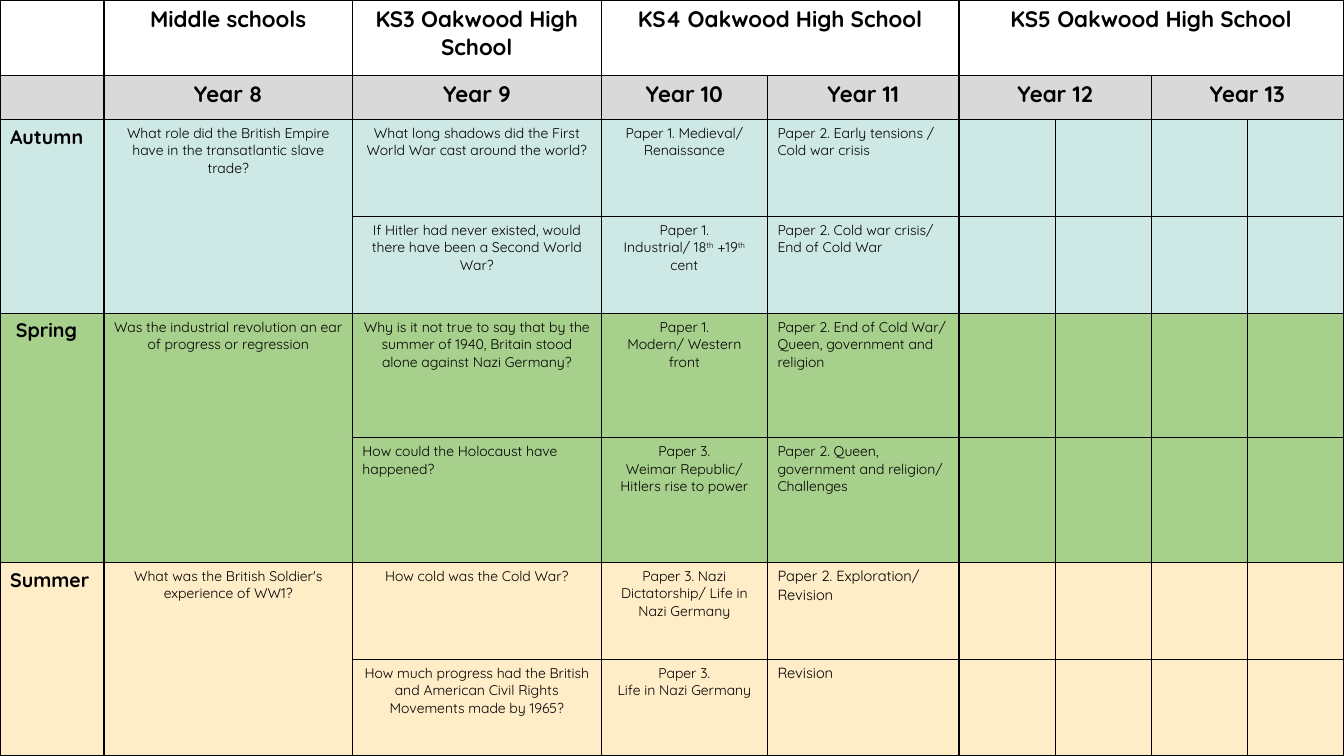
import pptx
import pptx.dml.color
import pptx.enum.text
import pptx.oxml
import pptx.oxml.ns
import pptx.util
from pptx.util import Cm, Pt

RGBColor = pptx.dml.color.RGBColor
PP_ALIGN = pptx.enum.text.PP_ALIGN

BLACK = RGBColor(0x00, 0x00, 0x00)
WHITE = RGBColor(0xFF, 0xFF, 0xFF)
GREY = RGBColor(0xD9, 0xD9, 0xD9)
AUTUMN = RGBColor(0xCE, 0xE9, 0xE5)
SPRING = RGBColor(0xA8, 0xD0, 0x8D)
SUMMER = RGBColor(0xFF, 0xED, 0xC8)

FONT = "Quicksand"
COL_WIDTHS = [2.62, 6.26, 6.27, 4.19, 4.83] + [2.42] * 4
ROW_HEIGHTS = [1.9, 1.11, 2.44, 2.44, 3.14, 3.14, 2.44, 2.44]
ROW_FILLS = [WHITE, GREY] + [AUTUMN] * 2 + [SPRING] * 2 + [SUMMER] * 2

# Cell text by row; ^ marks the start and end of a superscript
ROWS = [
    ["", "Middle schools", "KS3 Oakwood High School",
     "KS4 Oakwood High School", "", "KS5 Oakwood High School"],
    ["", "Year 8", "Year 9", "Year 10", "Year 11", "Year 12", "", "Year 13"],
    ["Autumn",
     "What role did the British Empire have in the transatlantic slave trade?",
     "What long shadows did the First World War cast around the world?",
     "Paper 1. Medieval/ Renaissance",
     "Paper 2. Early tensions / Cold war crisis"],
    ["", "",
     "If Hitler had never existed, would there have been a Second World War?",
     "Paper 1.\nIndustrial/ 18^th^ +19^th^ cent",
     "Paper 2. Cold war crisis/ End of Cold War"],
    ["Spring",
     "Was the industrial revolution an ear of progress or regression",
     "Why is it not true to say that by the summer of 1940, Britain stood "
     "alone against Nazi Germany?",
     "Paper 1.\nModern/ Western front",
     "Paper 2. End of Cold War/ Queen, government and religion"],
    ["", "",
     "How could the Holocaust have happened?",
     "Paper 3.\nWeimar Republic/\nHitlers rise to power",
     "Paper 2. Queen, government and religion/ Challenges"],
    ["Summer",
     "What was the British Soldier's experience of WW1?",
     "How cold was the Cold War?",
     "Paper 3. Nazi Dictatorship/ Life in Nazi Germany",
     "Paper 2. Exploration/ Revision"],
    ["", "",
     "How much progress had the British and American Civil Rights Movements "
     "made by 1965?",
     "Paper 3.\nLife in Nazi Germany",
     "Revision"],
]
HOLOCAUST = (5, 2)
MERGES = [((0, 3), (0, 4)), ((0, 5), (0, 8)), ((1, 5), (1, 6)), ((1, 7), (1, 8))]
MERGES += [((row, col), (row + 1, col)) for row in (2, 4, 6) for col in (0, 1)]


def add_borders(cell):
    tcPr = cell._tc.get_or_add_tcPr()
    for side in ("lnL", "lnR", "lnT", "lnB"):
        tcPr.append(pptx.oxml.parse_xml(
            f'<a:{side} {pptx.oxml.ns.nsdecls("a")} w="12700"><a:solidFill>'
            f'<a:srgbClr val="{BLACK}"/></a:solidFill></a:{side}>'))


def write_text(cell, text, size, bold, align):
    tf = cell.text_frame
    for i, line in enumerate(text.split("\n")):
        p = tf.add_paragraph() if i else tf.paragraphs[0]
        p.alignment = align
        for j, part in enumerate(line.split("^")):
            r = p.add_run()
            r.text = part
            r.font.name = FONT
            r.font.size = Pt(size)
            r.font.bold = bold
            r.font.color.rgb = BLACK
            if j % 2:
                r._r.get_or_add_rPr().set("baseline", "30000")


prs = pptx.Presentation()
prs.slide_width = Cm(33.87)
prs.slide_height = Cm(19.05)
s = prs.slides.add_slide(prs.slide_layouts[6])

table = s.shapes.add_table(len(ROW_HEIGHTS), len(COL_WIDTHS), 0, 0,
                           prs.slide_width, prs.slide_height).table
table.first_row = False
table.horz_banding = False
for col, width in zip(table.columns, COL_WIDTHS):
    col.width = Cm(width)
for row, height in zip(table.rows, ROW_HEIGHTS):
    row.height = Cm(height)

for r_idx, texts in enumerate(ROWS):
    for c_idx in range(len(COL_WIDTHS)):
        cell = table.cell(r_idx, c_idx)
        add_borders(cell)
        cell.fill.solid()
        cell.fill.fore_color.rgb = ROW_FILLS[r_idx]
        text = texts[c_idx] if c_idx < len(texts) else ""
        if not text:
            continue
        header = r_idx < 2
        season = c_idx == 0
        if header:
            size = 16
        elif season:
            size = 14
        else:
            size = 10.5 if c_idx == 4 and r_idx >= 6 else 10
        left = not header and (c_idx in (0, 4) or (r_idx, c_idx) == HOLOCAUST)
        write_text(cell, text, size, header or season,
                   PP_ALIGN.LEFT if left else PP_ALIGN.CENTER)

for first, last in MERGES:
    table.cell(*first).merge(table.cell(*last))
table.cell(4, 0).margin_left = Cm(0.4)

prs.save("out.pptx")
